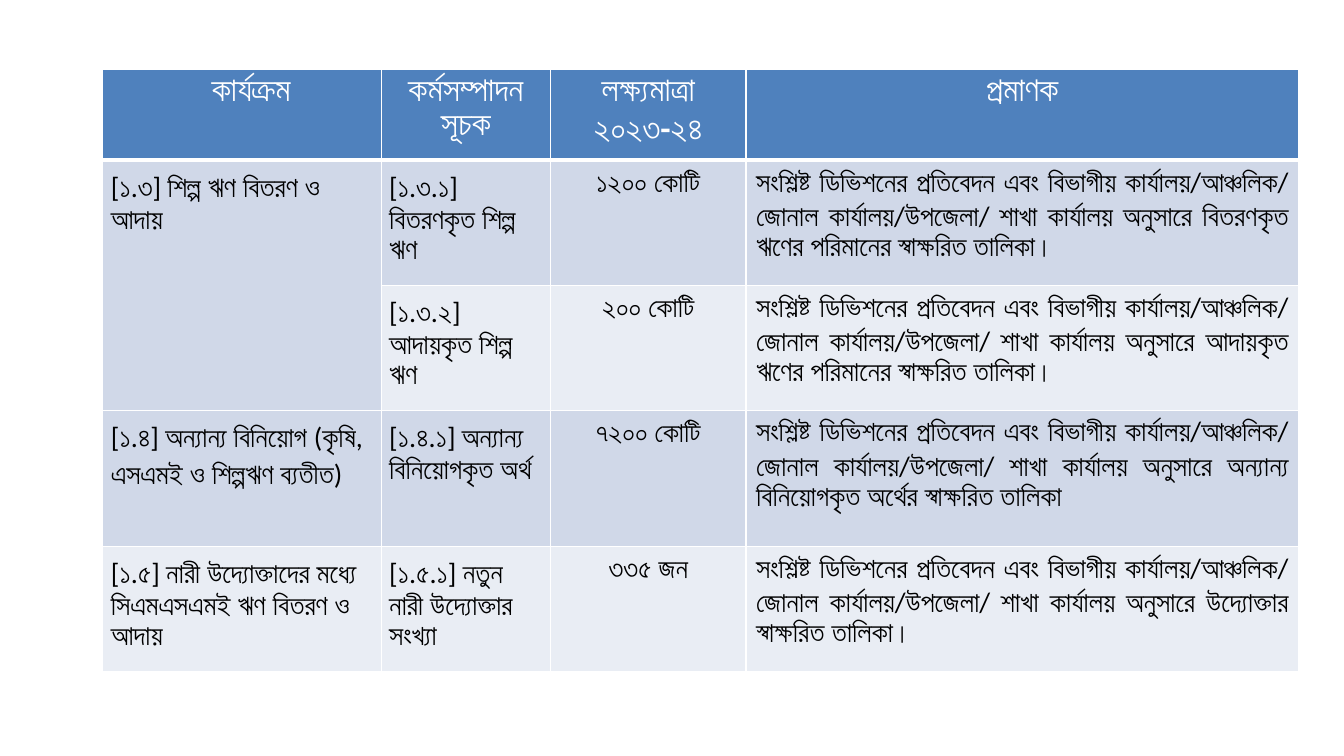
import pptx
import pptx.util
import pptx.dml.color
import pptx.enum.text
import pptx.oxml
import pptx.oxml.ns

Inches = pptx.util.Inches
Pt = pptx.util.Pt
RGBColor = pptx.dml.color.RGBColor
Align = pptx.enum.text.PP_ALIGN

WHITE = RGBColor(0xFF, 0xFF, 0xFF)
BLACK = RGBColor(0x00, 0x00, 0x00)
BLUE = RGBColor(0x4F, 0x81, 0xBD)
DARK = RGBColor(0xD0, 0xD8, 0xE8)
LIGHT = RGBColor(0xE9, 0xED, 0xF4)

WIDTHS = [2.76, 1.68, 1.94, 5.48]
HEIGHTS = [0.9, 1.24, 1.24, 1.35, 1.24]
BANDS = [BLUE, DARK, LIGHT, DARK, LIGHT]
SIDES = [Align.LEFT, Align.LEFT, Align.CENTER, Align.JUSTIFY]
HEADS = ["কার্যক্রম", "কর্মসম্পাদন সূচক", "লক্ষ্যমাত্রা ২০২৩-২৪", "প্রমাণক"]
PROOF = "সংশ্লিষ্ট ডিভিশনের প্রতিবেদন এবং বিভাগীয় কার্যালয়/আঞ্চলিক/ জোনাল কার্যালয়/উপজেলা/ শাখা কার্যালয় অনুসারে "
ROWS = [
    ("[১.৩] শিল্প ঋণ বিতরণ ও আদায়", "[১.৩.১] বিতরণকৃত শিল্প ঋণ", "১২০০ কোটি",
     "বিতরণকৃত ঋণের পরিমানের স্বাক্ষরিত তালিকা।"),
    ("", "[১.৩.২] আদায়কৃত শিল্প ঋণ", "২০০ কোটি",
     "আদায়কৃত ঋণের পরিমানের স্বাক্ষরিত তালিকা।"),
    ("[১.৪] অন্যান্য বিনিয়োগ (কৃষি, এসএমই ও শিল্পঋণ ব্যতীত)",
     "[১.৪.১] অন্যান্য বিনিয়োগকৃত অর্থ", "৭২০০ কোটি",
     "অন্যান্য বিনিয়োগকৃত অর্থের স্বাক্ষরিত তালিকা"),
    ("[১.৫] নারী উদ্যোক্তাদের মধ্যে সিএমএসএমই ঋণ বিতরণ ও আদায়",
     "[১.৫.১] নতুন নারী উদ্যোক্তার সংখ্যা", "৩৩৫ জন",
     "উদ্যোক্তার স্বাক্ষরিত তালিকা।"),
]


def write(frame, text, font="Calibri", size=20, color=BLACK, bold=False,
          align=Align.LEFT, line=None, after=None):
    para = frame.paragraphs[0]
    para.alignment = align
    if line:
        para.line_spacing = line
    if after:
        para.space_after = Pt(after)
    run = para.add_run()
    run.text = text
    run.font.name = font
    run.font.size = Pt(size)
    run.font.bold = bold
    run.font.color.rgb = color


class Deck:
    def __init__(self):
        self.show = pptx.Presentation()
        self.show.slide_width = Inches(13.33)
        self.show.slide_height = Inches(7.5)
        self.slide = self.show.slides.add_slide(self.show.slide_layouts[6])

    def table(self, left, top, widths, heights):
        grid = self.slide.shapes.add_table(
            len(heights), len(widths), Inches(left), Inches(top),
            Inches(sum(widths)), Inches(sum(heights))).table
        for col, width in zip(grid.columns, widths):
            col.width = Inches(width)
        for row, height in zip(grid.rows, heights):
            row.height = Inches(height)
        return grid

    def cell(self, box, fill, pad, top=1, base=1):
        box.margin_left = box.margin_right = Inches(pad[0])
        box.margin_top = box.margin_bottom = Inches(pad[1])
        box.fill.solid()
        box.fill.fore_color.rgb = fill
        props = box._tc.get_or_add_tcPr()
        edges = [("L", 1), ("R", 1), ("T", top), ("B", base)]
        for spot, (side, width) in enumerate(edges):
            props.insert(spot, pptx.oxml.parse_xml(
                f'<a:ln{side} {pptx.oxml.ns.nsdecls("a")} w="{Pt(width)}">'
                f'<a:solidFill><a:srgbClr val="{WHITE}"/></a:solidFill>'
                f'</a:ln{side}>'))


def main():
    deck = Deck()
    grid = deck.table(1.02, 0.69, WIDTHS, HEIGHTS)
    for col, head in enumerate(HEADS):
        box = grid.cell(0, col)
        deck.cell(box, BLUE, (0.1, 0.05), base=3)
        write(box.text_frame, head, size=24, color=WHITE, bold=True,
              align=Align.CENTER)
    grid.cell(0, 0).margin_left = Inches(0.28)
    for row, texts in enumerate(ROWS, 1):
        for col, text in enumerate(texts):
            box = grid.cell(row, col)
            last = col == 3
            deck.cell(box, BANDS[row], (0.1, 0.05) if last else (0.08, 0.08),
                      top=3 if row == 1 else 1)
            if last:
                write(box.text_frame, PROOF + text, align=SIDES[col])
            elif text:
                write(box.text_frame, text, align=SIDES[col],
                      line=1.07, after=15)
    grid.cell(1, 0).merge(grid.cell(2, 0))
    deck.show.save("out.pptx")


if __name__ == "__main__":
    main()
